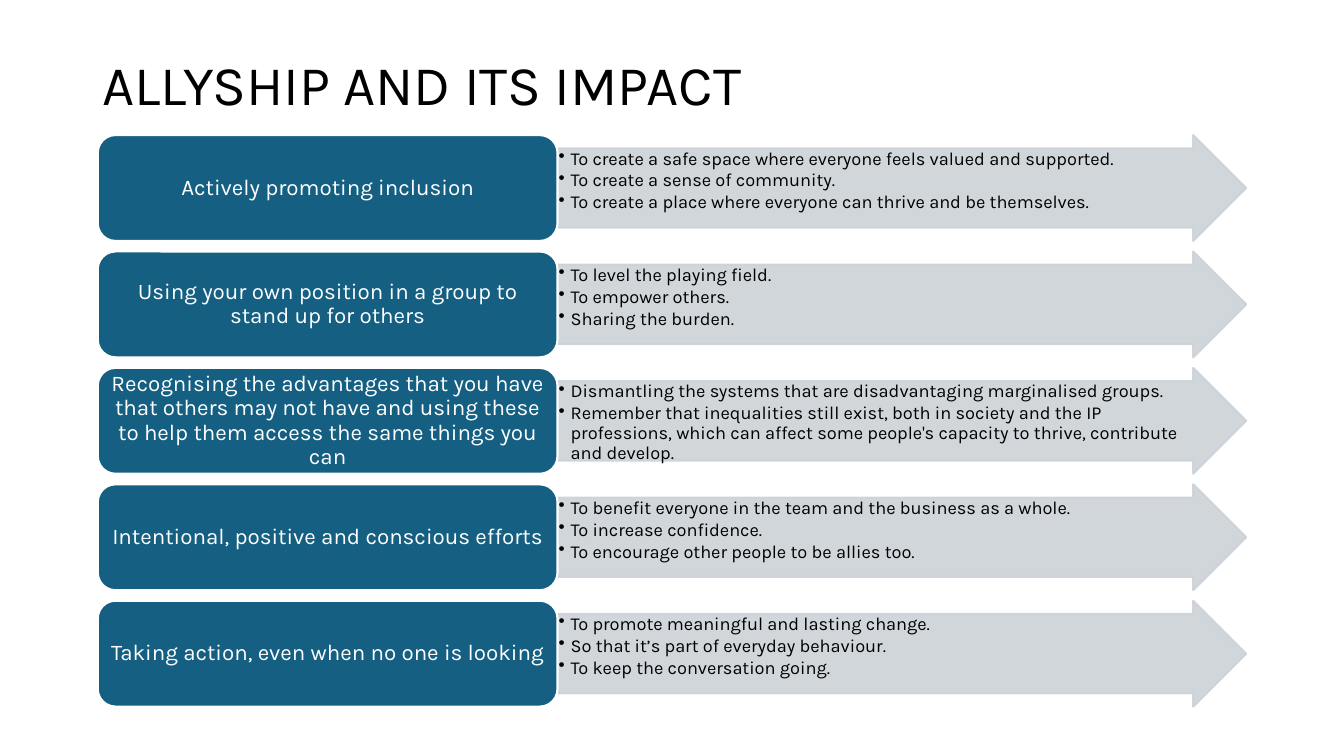
import lxml.etree
import pptx
import pptx.dml.color
import pptx.enum.shapes
import pptx.enum.text
import pptx.oxml.ns
import pptx.util

Inches = pptx.util.Inches
Pt = pptx.util.Pt
SHAPES = pptx.enum.shapes.MSO_SHAPE
ALIGN = pptx.enum.text.PP_ALIGN
ANCHOR = pptx.enum.text.MSO_ANCHOR
qn = pptx.oxml.ns.qn

COLOURS = {"text": "000000", "action": "156082", "arrow": "CCD2D8", "white": "FFFFFF"}
ARROW_OPACITY = 90
BULLET_INDENT = 0.12

ROWS = [
    ("Actively promoting inclusion",
     ["To create a safe space where everyone feels valued and supported.",
      "To create a sense of community.",
      "To create a place where everyone can thrive and be themselves."]),
    ("Using your own position in a group to stand up for others",
     ["To level the playing field.",
      "To empower others.",
      "Sharing the burden."]),
    ("Recognising the advantages that you have that others may not have "
     "and using these to help them access the same things you can",
     ["Dismantling the systems that are disadvantaging marginalised groups.",
      "Remember that inequalities still exist, both in society and the IP professions, "
      "which can affect some people's capacity to thrive, contribute and develop."]),
    ("Intentional, positive and conscious efforts",
     ["To benefit everyone in the team and the business as a whole.",
      "To increase confidence.",
      "To encourage other people to be allies too."]),
    ("Taking action, even when no one is looking",
     ["To promote meaningful and lasting change.",
      "So that it’s part of everyday behaviour.",
      "To keep the conversation going."]),
]


def colour(name):
    return pptx.dml.color.RGBColor.from_string(COLOURS[name])


def set_values(target, values):
    for name, value in values.items():
        setattr(target, name, value)


def add_bullet(para):
    properties = para._p.get_or_add_pPr()
    indent = Inches(BULLET_INDENT)
    properties.set("marL", str(indent))
    properties.set("indent", str(-indent))
    lxml.etree.SubElement(properties, qn("a:buChar")).set("char", "•")


def write(box, lines, size, ink, anchor, insets, align=ALIGN.LEFT, bullets=False):
    side, end = map(Inches, insets)
    frame = box.text_frame
    set_values(frame, {"word_wrap": True, "vertical_anchor": anchor,
                       "margin_left": side, "margin_right": side,
                       "margin_top": end, "margin_bottom": end})
    for index, line in enumerate(lines):
        para = frame.paragraphs[0] if index == 0 else frame.add_paragraph()
        if bullets:
            add_bullet(para)
        set_values(para, {"alignment": align, "line_spacing": 0.9,
                          "space_before": Pt(0),
                          "space_after": Pt(1.6 if bullets else 0)})
        span = para.add_run()
        span.text = line
        set_values(span.font, {"name": "Karla", "size": Pt(size)})
        span.font.color.rgb = colour(ink)


def add_block(page, kind, place, fill, line):
    block = page.shapes.add_shape(kind, *map(Inches, place))
    block.shadow.inherit = False
    block.fill.solid()
    block.fill.fore_color.rgb = colour(fill)
    block.line.color.rgb = colour(line)
    block.line.width = Pt(1.5)
    return block


def add_title(page, left, top, width, height):
    box = page.shapes.add_textbox(*map(Inches, (left, top, width, height)))
    write(box, ["ALLYSHIP AND ITS IMPACT"], 40, "text", ANCHOR.MIDDLE, (0.1, 0.05))


def add_row(page, left, top, width, height, action, impacts):
    action_width = 4.56
    # Arrow listing the impacts
    arrow = add_block(page, SHAPES.RIGHT_ARROW,
                      (left + action_width, top, width - action_width, height),
                      "arrow", "arrow")
    arrow.adjustments[0] = 0.75
    arrow.adjustments[1] = 0.5
    for tint in arrow._element.spPr.iter(qn("a:srgbClr")):
        lxml.etree.SubElement(tint, qn("a:alpha")).set("val", str(ARROW_OPACITY * 1000))
    write(arrow, impacts, 13, "text", ANCHOR.TOP, (0.01, 0.01), bullets=True)
    # Rounded box naming the action
    label = add_block(page, SHAPES.ROUNDED_RECTANGLE,
                      (left, top, action_width, height), "action", "white")
    write(label, [action], 16, "white", ANCHOR.MIDDLE, (0.07, 0.03), ALIGN.CENTER)


def add_rows(page, left, top, width, height):
    row_height = 1.05
    pitch = (height - row_height) / (len(ROWS) - 1)
    for index, (action, impacts) in enumerate(ROWS):
        add_row(page, left, top + index * pitch, width, row_height, action, impacts)


def main():
    deck = pptx.Presentation()
    deck.slide_width = Inches(13.33)
    deck.slide_height = Inches(7.5)
    page = deck.slides.add_slide(deck.slide_layouts[6])
    add_title(page, 0.92, 0.4, 11.5, 0.93)
    add_rows(page, 0.97, 1.34, 11.39, 5.67)
    deck.save("out.pptx")


if __name__ == "__main__":
    main()
